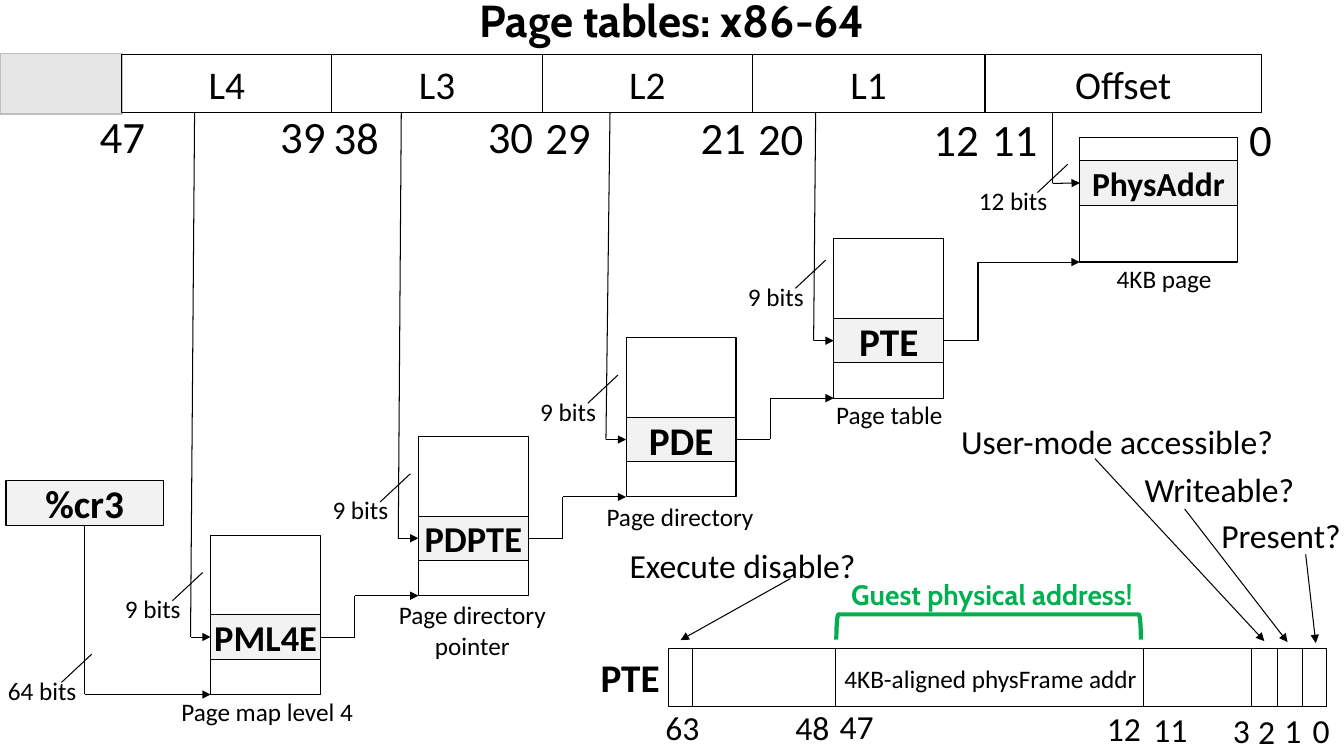
from pptx import Presentation
from pptx.dml.color import RGBColor
from pptx.enum.shapes import MSO_CONNECTOR, MSO_SHAPE
from pptx.enum.text import MSO_ANCHOR, PP_ALIGN
from pptx.oxml.ns import qn
from pptx.util import Inches, Pt
from lxml import etree

THEME = {
    "ink": "000000", "entry": "F2F2F2", "unused": "E7E6E6", "unused_line": "BFBFBF", "accent": "00B050",
    "body": "Calibri", "display": "Cabin",
    "bit": 32, "big": 28, "long_entry": 26, "mid": 24, "guest": 20, "small": 18,
    "hairline": 0.75, "bracket": 3,
}

# Virtual address: field name, left edge; the last edge closes the row
FIELDS = [("L4", 1.21), ("L3", 3.29), ("L2", 5.38), ("L1", 7.46), ("Offset", 9.77)]
FIELD_END, FIELD_TOP, FIELD_HEIGHT = 12.51, 0.54, 0.58
ADDRESS_BITS = [
    ("47", 0.89, 1.03), ("39", 2.68, 1.03), ("38", 3.21, 1.04), ("30", 4.74, 1.03),
    ("29", 5.31, 1.04), ("21", 6.85, 1.04), ("20", 7.42, 1.05), ("12", 9.16, 1.06),
    ("11", 9.74, 1.06), ("0", 12.29, 1.06),
]

# Table levels: entry, type size, index line x, slash offset, caption, caption box (left, top, width)
LEVELS = [
    ("PML4E", "long_entry", 1.93, 0.37, "Page map level 4", (1.64, 6.86, 2.02)),
    ("PDPTE", "long_entry", 3.98, 0.37, "Page directory pointer", (3.82, 5.9, 1.73)),
    ("PDE", "big", 6.05, 0.37, "Page directory", (5.88, 4.92, 1.73)),
    ("PTE", "big", 8.09, 0.21, "Page table", (8.13, 3.91, 1.38)),
]
FIRST_LEFT, FIRST_TOP, STEP_X, STEP_Y = 2.09, 5.31, 2.06, -0.98
TABLE_WIDTH, TABLE_HEIGHT = 1.09, 1.58
ENTRY_OFFSET, ENTRY_HEIGHT, ELBOW = 0.79, 0.44, 0.34
PAGE_LEFT, PAGE_TOP, PAGE_WIDTH, PAGE_HEIGHT = 10.71, 1.36, 1.56, 1.24

# Page table entry layout
PTE_TOP, PTE_HEIGHT = 6.43, 0.58
PTE_BLOCKS = [(6.63, 8.29), (8.29, 13.16)]
PTE_DIVIDERS = [6.87, 11.34, 12.41, 12.67, 12.92]
PTE_BITS = [
    ("63", 6.5, 6.96), ("48", 7.79, 6.96), ("47", 8.23, 6.95), ("12", 10.88, 6.97), ("11", 11.34, 6.98),
    ("3", 12.13, 6.99), ("2", 12.38, 7.0), ("1", 12.64, 6.99), ("0", 12.92, 6.99),
]
# Flags: label, box (left, top, width), arrow start, arrow end
FLAGS = [
    ("Execute disable?", (6.12, 5.36, 2.49), (7.84, 5.74), (6.75, 6.35)),
    ("User-mode accessible?", (9.4, 4.13, 3.36), (10.86, 4.55), (12.54, 6.36)),
    ("Writeable?", (10.96, 4.6, 2.27), (11.75, 5.05), (12.77, 6.37)),
    ("Present?", (11.8, 5.06, 1.81), (12.95, 5.5), (13.05, 6.38)),
]

deck = Presentation()
deck.slide_width, deck.slide_height = Inches(13.33), Inches(7.5)
slide = deck.slides.add_slide(deck.slide_layouts[6])


def color(name):
    return RGBColor.from_string(THEME[name])


def write(shape, words, size, bold=False, align=PP_ALIGN.CENTER, font="body", ink="ink"):
    paragraph = shape.text_frame.paragraphs[0]
    paragraph.text = words
    paragraph.alignment = align
    paragraph.font.name = THEME[font]
    paragraph.font.size = Pt(THEME[size])
    paragraph.font.bold = bold
    paragraph.font.color.rgb = color(ink)
    return paragraph


def label(words, left, top, width, size, **style):
    height = THEME[size] * 1.2 / 72 + 0.1
    area = slide.shapes.add_textbox(Inches(left), Inches(top), Inches(width), Inches(height))
    area.text_frame.word_wrap = True
    return write(area, words, size, **style)


def box(left, top, width, height, fill=None, line="ink", weight=THEME["hairline"], kind=MSO_SHAPE.RECTANGLE):
    shape = slide.shapes.add_shape(kind, Inches(left), Inches(top), Inches(width), Inches(height))
    shape.shadow.inherit = False
    if fill:
        shape.fill.solid()
        shape.fill.fore_color.rgb = color(fill)
    else:
        shape.fill.background()
    shape.line.color.rgb = color(line)
    shape.line.width = Pt(weight)
    return shape


def named_box(words, left, top, width, height, size, fill=None, bold=False):
    shape = box(left, top, width, height, fill)
    frame = shape.text_frame
    frame.margin_left = frame.margin_right = frame.margin_top = frame.margin_bottom = 0
    frame.vertical_anchor = MSO_ANCHOR.MIDDLE
    frame.word_wrap = False
    write(shape, words, size, bold)
    return shape


def wire(start, end, arrow=False, source=None, target=None):
    """Straight line; source and target are (shape, side) joints."""
    line = slide.shapes.add_connector(
        MSO_CONNECTOR.STRAIGHT, *(Inches(value) for value in (*start, *end)))
    line.line.color.rgb = color("ink")
    line.line.width = Pt(THEME["hairline"])
    if arrow:
        etree.SubElement(line.line._get_or_add_ln(), qn("a:tailEnd"), type="triangle")
    etree.SubElement(line._element.spPr, qn("a:effectLst"))
    if source:
        line.begin_connect(*source)
    if target:
        line.end_connect(*target)


def bus_width(words, x, y, indent):
    wire((x, y), (x - 0.3, y + 0.28))
    label(words, x - indent, y + 0.16, 1.23, "small", align=PP_ALIGN.LEFT)


# Title
title = label("Page tables: x86-64", 2.42, -0.06, 8.5, "bit", bold=True, font="display")
title.line_spacing = 0.9

# Virtual address
box(0, 0.53, 1.21, 0.6, "unused", "unused_line", 1)
field_ends = [left for _, left in FIELDS[1:]] + [FIELD_END]
for (name, left), end in zip(FIELDS, field_ends):
    named_box(name, left, FIELD_TOP, end - left, FIELD_HEIGHT, "big")
for bit, left, top in ADDRESS_BITS:
    label(bit, left, top, 0.7, "bit", align=PP_ALIGN.LEFT)
field_bottom = FIELD_TOP + FIELD_HEIGHT

# Root register
root_bottom = FIRST_TOP + TABLE_HEIGHT
register = named_box("%cr3", 0.06, 4.77, 1.56, ENTRY_HEIGHT, "big", "entry", True)
wire((0.84, 5.21), (0.84, root_bottom), source=(register, 2))
wire((0.84, root_bottom), (FIRST_LEFT, root_bottom), arrow=True)
bus_width("64 bits", 0.91, 6.49, 0.93)

# Four table levels, each pointing at the bottom of the next
corners = [(FIRST_LEFT + STEP_X * i, FIRST_TOP + STEP_Y * i) for i in range(len(LEVELS))]
next_bases = [(left, top + TABLE_HEIGHT) for left, top in corners[1:]]
next_bases.append((PAGE_LEFT, PAGE_TOP + PAGE_HEIGHT))
for level, (left, top), (next_left, next_base) in zip(LEVELS, corners, next_bases):
    entry_name, size, index_x, slash, caption, caption_box = level
    box(left, top, TABLE_WIDTH, TABLE_HEIGHT)
    entry = named_box(entry_name, left, top + ENTRY_OFFSET, TABLE_WIDTH, ENTRY_HEIGHT, size, "entry", True)
    entry_y = top + ENTRY_OFFSET + ENTRY_HEIGHT / 2
    stem_x, right = left - 0.2, left + TABLE_WIDTH
    wire((index_x, field_bottom), (stem_x, entry_y))
    wire((stem_x, entry_y), (left, entry_y), arrow=True, target=(entry, 1))
    wire((right, entry_y), (right + ELBOW, entry_y), source=(entry, 3))
    wire((right + ELBOW, entry_y), (right + ELBOW, next_base))
    wire((right + ELBOW, next_base), (next_left, next_base), arrow=True)
    bus_width("9 bits", left - 0.08, top + slash, 0.87)
    label(caption, *caption_box, "small")

# Physical page
box(PAGE_LEFT, PAGE_TOP, PAGE_WIDTH, PAGE_HEIGHT)
address = named_box("PhysAddr", PAGE_LEFT, 1.59, PAGE_WIDTH, 0.45, "mid", "entry", True)
wire((10.44, field_bottom), (10.44, 1.82))
wire((10.44, 1.82), (PAGE_LEFT, 1.82), arrow=True, target=(address, 1))
bus_width("12 bits", 10.59, 1.63, 0.98)
label("4KB page", 10.59, 2.56, 1.91, "small")

# Page table entry
for left, right in PTE_BLOCKS:
    box(left, PTE_TOP, right - left, PTE_HEIGHT)
for x in PTE_DIVIDERS:
    wire((x, PTE_TOP), (x, PTE_TOP + PTE_HEIGHT))
for bit, left, top in PTE_BITS:
    label(bit, left, top, 0.26 if len(bit) == 1 else 0.58, "mid", align=PP_ALIGN.LEFT)
label("PTE", 5.8, PTE_TOP, 0.9, "big", bold=True)
label("4KB-aligned physFrame addr", 8.11, 6.53, 3.43, "small")
for flag, flag_box, start, end in FLAGS:
    label(flag, *flag_box, "mid")
    wire(start, end, arrow=True)

# Guest address bracket
bracket = box(9.68, 4.71, 0.25, 3.02, line="accent", weight=THEME["bracket"], kind=MSO_SHAPE.LEFT_BRACKET)
bracket.rotation = 90
label("Guest physical address!", 8.16, 5.68, 3.36, "guest", bold=True, font="display", ink="accent")

deck.save("out.pptx")
